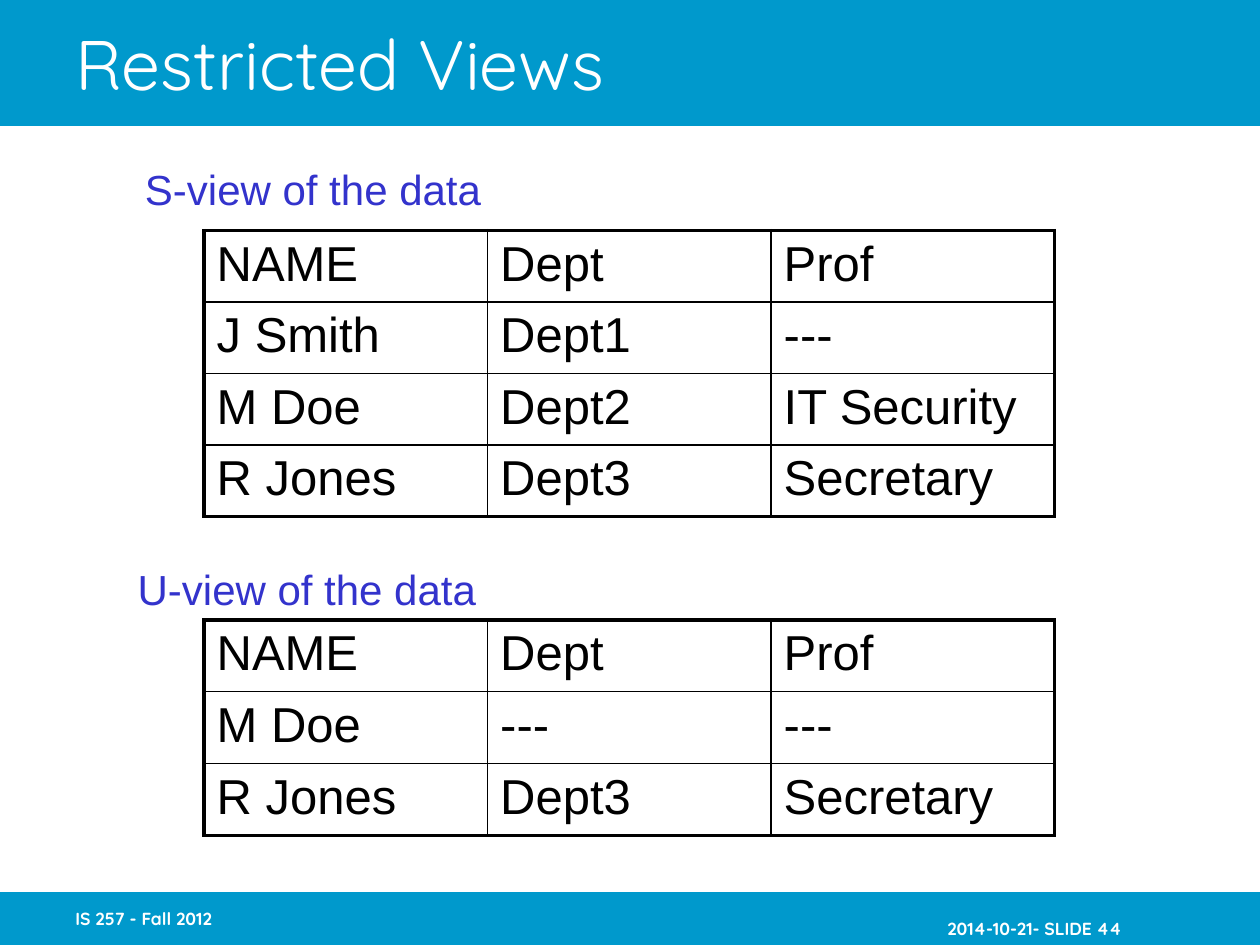
from pptx import Presentation
from pptx.dml.color import RGBColor
from pptx.enum.shapes import MSO_SHAPE as Shape
from pptx.enum.text import MSO_ANCHOR as Anchor, PP_ALIGN as Align
from pptx.oxml import parse_xml as make
from pptx.oxml.ns import nsdecls
from pptx.util import Inches, Pt

WIDE, HIGH = 10, 7.5
LEFT, COL = 1.62, 2.25
BAND, FOOT = 1, 0.42
BASE = HIGH - FOOT
THIN, THICK = 1, 2.25
TITLE = {"name": "Quicksand", "size": Pt(40), "color": "FFFFFF"}
SMALL = {"name": "Quicksand", "size": Pt(10), "bold": True, "color": "FFFFFF"}
LABEL = {"name": "Arial", "size": Pt(24), "color": "3333CC"}
CELL = {"name": "Arial", "size": Pt(28), "color": "000000"}
HEAD = ["NAME", "Dept", "Prof"]
FULL = [HEAD, ["J Smith", "Dept1", "---"], ["M Doe", "Dept2", "IT Security"],
        ["R Jones", "Dept3", "Secretary"]]
PART = [HEAD, ["M Doe", "---", "---"], ["R Jones", "Dept3", "Secretary"]]


def paint(part, code):
    part.fill.solid()
    part.fill.fore_color.rgb = RGBColor.from_string(code)


def style(font, form):
    for key, value in form.items():
        if key == "color":
            paint(font, value)
        else:
            setattr(font, key, value)


def band(slide, top, high):
    bar = slide.shapes.add_shape(Shape.RECTANGLE, 0, Inches(top),
                                 Inches(WIDE), Inches(high))
    bar.shadow.inherit = False
    paint(bar, "0099CC")
    bar.line.fill.background()


def write(slide, text, place, form, anchor=Anchor.MIDDLE, align=Align.LEFT, wrap=True):
    box = slide.shapes.add_textbox(*map(Inches, place))
    frame = box.text_frame
    frame.word_wrap = wrap
    frame.vertical_anchor = anchor
    para = frame.paragraphs[0]
    para.alignment = align
    run = para.add_run()
    run.text = text
    style(run.font, form)


def edge(cell, sides):
    props = cell._tc.get_or_add_tcPr()
    for spot, (side, width) in enumerate(sides.items()):
        props.insert(spot, make(
            f'<a:ln{side} {nsdecls("a")} w="{Pt(width)}"><a:solidFill>'
            f'<a:srgbClr val="000000"/></a:solidFill></a:ln{side}>'))


def grid(slide, data, top, step):
    rows, cols = len(data), len(data[0])
    table = slide.shapes.add_table(rows, cols, *map(
        Inches, (LEFT, top, COL * cols, step * rows))).table
    for r, row in enumerate(data):
        for c, text in enumerate(row):
            cell = table.cell(r, c)
            cell.fill.background()
            para = cell.text_frame.paragraphs[0]
            run = para.add_run()
            run.text = text
            style(run.font, CELL | {"bold": False})
            outer = {"L": c == 0, "R": c == cols - 1, "T": r == 0, "B": r == rows - 1}
            edge(cell, {side: THICK if out else THIN for side, out in outer.items()})


def main():
    deck = Presentation()
    deck.slide_width, deck.slide_height = Inches(WIDE), Inches(HIGH)
    slide = deck.slides.add_slide(deck.slide_layouts[6])
    band(slide, 0, BAND)
    band(slide, BASE, FOOT)
    write(slide, "2014-10-21- SLIDE 44", (7.42, BASE, 2.08, FOOT), SMALL, Anchor.BOTTOM)
    write(slide, "IS 257 - Fall 2012", (0.5, BASE, 2.08, FOOT), SMALL)
    write(slide, "Restricted Views", (0.5, 0, 8.5, BAND), TITLE)
    grid(slide, FULL, 1.83, 0.51)
    grid(slide, PART, 4.92, 0.57)
    for text, place in [("S-view of the data", (1.05, 1.25, 2.87, 0.5)),
                        ("U-view of the data", (0.99, 4.42, 2.89, 0.5))]:
        write(slide, text, place, LABEL, Anchor.TOP, Align.CENTER, False)
    deck.save("out.pptx")


if __name__ == "__main__":
    main()
